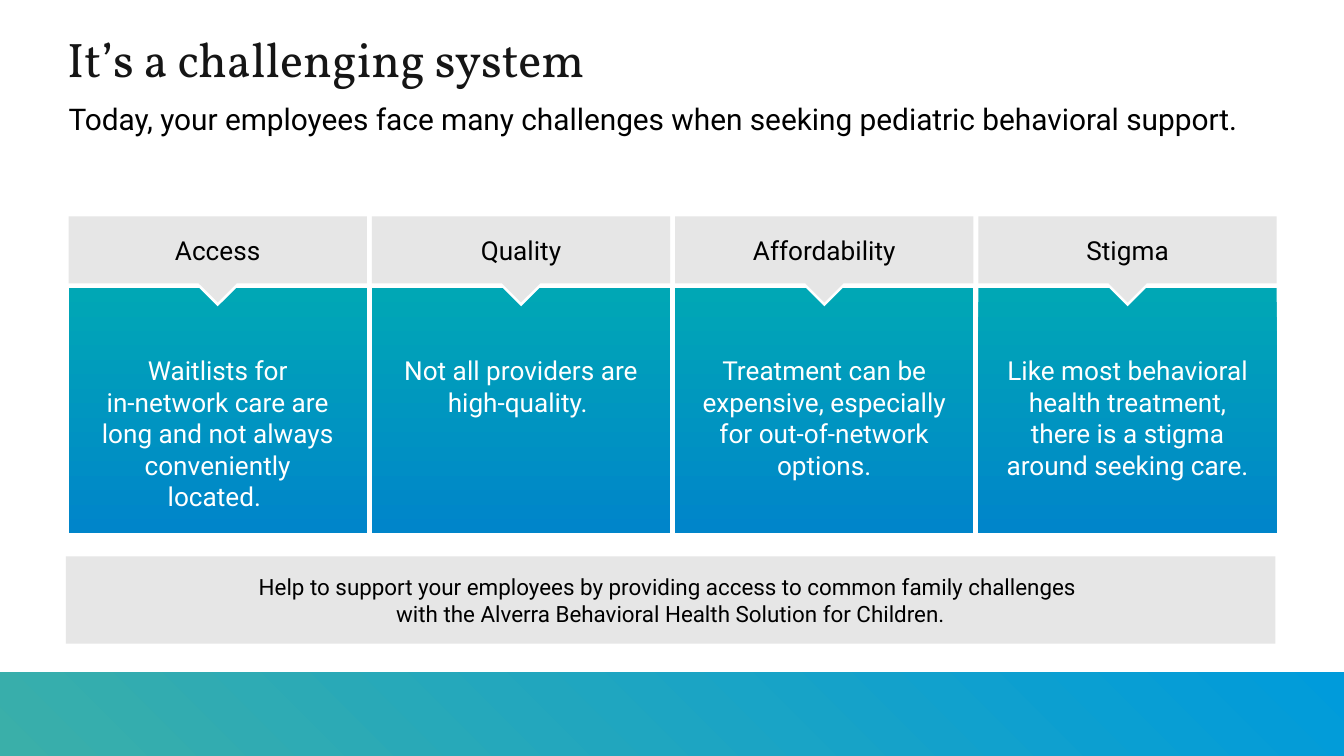
from dataclasses import dataclass

from pptx import Presentation
from pptx.dml.color import RGBColor as Rgb
from pptx.enum.shapes import MSO_SHAPE as Shape
from pptx.enum.text import MSO_ANCHOR as Anchor, PP_ALIGN as Align
from pptx.util import Inches, Pt


@dataclass(frozen=True)
class Theme:
    """Colours, fonts and type sizes of the slide."""
    heading_font: str = "Vollkorn"
    body_font: str = "Roboto"
    ink: str = "151515"
    black: str = "000000"
    white: str = "FFFFFF"
    grey: str = "E6E6E6"
    card_gradient: tuple = ("00A7B5", "0085CA")
    band_gradient: tuple = ("009BDB", "3AAFA9")
    title_size: int = 26
    subtitle_size: int = 16
    card_size: int = 14
    note_size: int = 12


THEME = Theme()

CHALLENGES = [
    ("Access", "Waitlists for\vin-network care are long and not always conveniently located. "),
    ("Quality", "Not all providers are high-quality. "),
    ("Affordability", "Treatment can be expensive, especially for out-of-network options."),
    ("Stigma", "Like most behavioral health treatment, there is a stigma around seeking care."),
]
NOTE = ("Help to support your employees by providing access to common family challenges "
        "\vwith the Alverra Behavioral Health Solution for Children.")

SLIDE_WIDTH = 10
SLIDE_HEIGHT = SLIDE_WIDTH * 9 / 16
BAND_TOP = 5
LEFT, RIGHT = 0.51, 9.5
CARD_WIDTH = 2.22
PITCH = (RIGHT - LEFT - CARD_WIDTH) / (len(CHALLENGES) - 1)
HEADER_TOP, HEADER_HEIGHT = 1.61, 0.5
CARD_TOP, CARD_HEIGHT = 2.14, 1.83
POINTER_MIDDLE = 2.11


def write(box, text, size, color, font=THEME.body_font, align=Align.CENTER,
          anchor=Anchor.MIDDLE, insets=(0.1, 0.05, 0.1, 0.05)):
    """Put one styled paragraph into a shape."""
    frame = box.text_frame
    frame.word_wrap = True
    frame.vertical_anchor = anchor
    frame.margin_left, frame.margin_top, frame.margin_right, frame.margin_bottom = map(Inches, insets)
    frame.text = text
    para = frame.paragraphs[0]
    para.alignment = align
    for span in para.runs:
        span.font.name = font
        span.font.size = Pt(size)
        span.font.color.rgb = Rgb.from_string(color)


def add_label(page, place, text, size, color, **style):
    """Add a left-aligned text box."""
    box = page.shapes.add_textbox(*map(Inches, place))
    write(box, text, size, color, align=Align.LEFT, **style)


def add_block(page, place, color=None, rotation=0):
    """Add a rectangle without outline or shadow."""
    block = page.shapes.add_shape(Shape.RECTANGLE, *map(Inches, place))
    block.shadow.inherit = False
    block.line.fill.background()
    block.rotation = rotation
    if color:
        block.fill.solid()
        block.fill.fore_color.rgb = Rgb.from_string(color)
    return block


def add_gradient_block(page, place, colors, angle, rotation=0):
    """Add a rectangle with a two-colour linear gradient."""
    block = add_block(page, place, rotation=rotation)
    block.fill.gradient()
    block.fill.gradient_angle = angle
    for stop, position, color in zip(block.fill.gradient_stops, (0, 1), colors):
        stop.position = position
        stop.color.rgb = Rgb.from_string(color)
    return block


def add_pointer(page, center, side, color):
    """Add a square turned on its corner below a header."""
    add_block(page, (center - side / 2, POINTER_MIDDLE - side / 2, side, side), color, rotation=45)


def add_challenge(page, left, heading, detail):
    """Add one column with a header that points at its card."""
    center = left + CARD_WIDTH / 2
    card = add_gradient_block(page, (left, CARD_TOP, CARD_WIDTH, CARD_HEIGHT),
                              THEME.card_gradient, angle=270)
    write(card, detail, THEME.card_size, THEME.white, anchor=Anchor.TOP, insets=(0.2, 0.5, 0.2, 0))
    add_pointer(page, center, 0.24, THEME.white)
    header = add_block(page, (left, HEADER_TOP, CARD_WIDTH, HEADER_HEIGHT), THEME.grey)
    write(header, heading, THEME.card_size, THEME.black)
    add_pointer(page, center, 0.2, THEME.grey)


def main():
    """Build the slide and save it."""
    deck = Presentation()
    deck.slide_width, deck.slide_height = Inches(SLIDE_WIDTH), Inches(SLIDE_HEIGHT)
    page = deck.slides.add_slide(deck.slide_layouts[6])

    add_gradient_block(page, (0, BAND_TOP, SLIDE_WIDTH, SLIDE_HEIGHT - BAND_TOP),
                       THEME.band_gradient, angle=45, rotation=180)
    add_label(page, (0.5, 0, 9.29, 0.65), "It’s a challenging system", THEME.title_size, THEME.ink,
              font=THEME.heading_font, anchor=Anchor.BOTTOM, insets=(0, 0.05, 0.1, 0))
    add_label(page, (LEFT, 0.7, 8.99, 0.5),
              "Today, your employees face many challenges when seeking pediatric behavioral support.",
              THEME.subtitle_size, THEME.black, anchor=Anchor.TOP, insets=(0, 0.05, 0.1, 0.05))
    note = add_block(page, (0.49, 4.14, 9, 0.65), THEME.grey)
    write(note, NOTE, THEME.note_size, THEME.black)
    for index, (heading, detail) in enumerate(CHALLENGES):
        add_challenge(page, LEFT + index * PITCH, heading, detail)

    deck.save("out.pptx")


if __name__ == "__main__":
    main()
